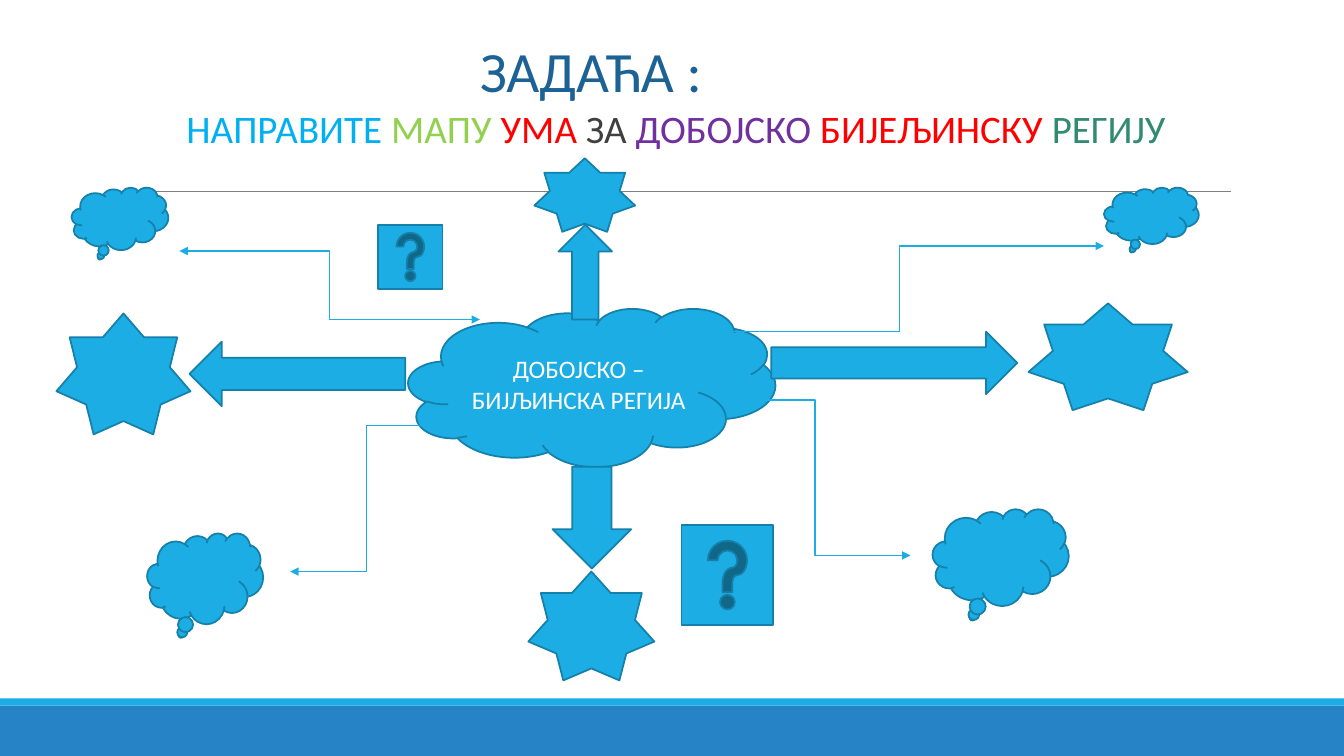
from lxml import etree
from pptx import Presentation
from pptx.dml.color import RGBColor
from pptx.enum.shapes import MSO_CONNECTOR, MSO_SHAPE
from pptx.enum.text import MSO_ANCHOR, PP_ALIGN
from pptx.oxml.ns import qn
from pptx.util import Inches, Pt

RECT, CLOUD = MSO_SHAPE.RECTANGLE, MSO_SHAPE.CLOUD
RIGHT, LEFT = MSO_SHAPE.RIGHT_ARROW, MSO_SHAPE.LEFT_ARROW
UP, DOWN = MSO_SHAPE.UP_ARROW, MSO_SHAPE.DOWN_ARROW
STAR, BUBBLE = MSO_SHAPE.STAR_7_POINT, MSO_SHAPE.CLOUD_CALLOUT
HELP = MSO_SHAPE.ACTION_BUTTON_HELP
STRAIGHT, ELBOW = MSO_CONNECTOR.STRAIGHT, MSO_CONNECTOR.ELBOW

WHITE = RGBColor(0xFF, 0xFF, 0xFF)
GRAY = RGBColor(0x80, 0x80, 0x80)
DARK = RGBColor(0x40, 0x40, 0x40)
BLUE = RGBColor(0x1C, 0xAD, 0xE4)
EDGE = RGBColor(0x15, 0x80, 0xA9)
BAND = RGBColor(0x26, 0x83, 0xC6)
NAVY = RGBColor(0x1D, 0x62, 0x94)
SKY = RGBColor(0x00, 0xB0, 0xF0)
LIME = RGBColor(0x92, 0xD0, 0x50)
RED = RGBColor(0xFF, 0x00, 0x00)
PURPLE = RGBColor(0x70, 0x30, 0xA0)
GREEN = RGBColor(0x32, 0x8B, 0x71)

prs = Presentation()
prs.slide_width, prs.slide_height = Inches(13.33), Inches(7.5)
slide = prs.slides.add_slide(prs.slide_layouts[6])


def add_form(kind, box, fill=BLUE, edge=EDGE):
    form = slide.shapes.add_shape(kind, *map(Inches, box))
    form.shadow.inherit = False
    form.fill.solid()
    form.fill.fore_color.rgb = fill
    if edge is None:
        form.line.fill.background()
    else:
        form.line.color.rgb = edge
        form.line.width = Pt(1.25)
    return form


def add_link(kind, ends, color, width, tips=()):
    link = slide.shapes.add_connector(kind, *map(Inches, ends))
    link.line.color.rgb = color
    link.line.width = Pt(width)
    for tip in tips:
        etree.SubElement(link.line._get_or_add_ln(), qn("a:" + tip), type="triangle")
    etree.SubElement(link._element.spPr, qn("a:effectLst"))


add_form(RECT, (0, 7, 13.33, 0.5), BAND, None)
add_form(RECT, (0, 6.93, 13.33, 0.07), BLUE, None)
add_link(STRAIGHT, (1.31, 1.9, 12.21, 1.9), GRAY, 0.5)

head = slide.shapes.add_textbox(0, Inches(0.01), Inches(13.33), Inches(1.57))
frame = head.text_frame
frame.word_wrap = True
frame.margin_left = frame.margin_right = 0
frame.margin_top = Inches(0.53)
lines = [
    (4.76, 40.7, 0, [("ЗАДАЋА :", NAVY)]),
    (1.85, 27.8, 11, [
        ("НАПРАВИТЕ ", SKY), ("МАПУ ", LIME), ("УМА ", RED), ("ЗА ", DARK),
        ("ДОБОЈСКО ", PURPLE), ("БИЈЕЉИНСКУ ", RED), ("РЕГИЈУ", GREEN)]),
]
for row, (indent, size, gap, words) in enumerate(lines):
    para = frame.add_paragraph() if row else frame.paragraphs[0]
    para._p.get_or_add_pPr().set("marL", str(Inches(indent)))
    para.line_spacing = 0.7
    para.space_before = Pt(gap)
    para.font.name = "Calibri"
    para.font.size = Pt(size)
    for word, color in words:
        run = para.add_run()
        run.text = word
        run.font.color.rgb = color

hub = add_form(CLOUD, (4.05, 3.06, 3.64, 1.57))
hub.text_frame.word_wrap = True
hub.text_frame.vertical_anchor = MSO_ANCHOR.MIDDLE
label = hub.text_frame.paragraphs[0]
label.text = "ДОБОЈСКО –БИЈЉИНСКА РЕГИЈА"
label.alignment = PP_ALIGN.CENTER
label.font.name = "Calibri"
label.font.size = Pt(18)
label.font.color.rgb = WHITE

both = ("headEnd", "tailEnd")
for ends, tips in [
    ((4.39, 4.22, 2.88, 5.67), both[1:]),
    ((7.14, 3.97, 9.03, 5.51), both),
    ((6.89, 3.29, 10.95, 2.44), both),
    ((4.76, 3.17, 1.78, 2.49), both),
]:
    add_link(ELBOW, ends, BLUE, 1, tips)

for kind, box in [
    (RIGHT, (7.65, 3.29, 2.44, 0.62)),
    (DOWN, (5.48, 4.63, 0.78, 1.01)),
    (LEFT, (1.88, 3.39, 2.14, 0.64)),
    (UP, (5.54, 2.23, 0.53, 0.94)),
    (STAR, (10.2, 3.01, 1.58, 1.06)),
    (STAR, (0.56, 3.11, 1.33, 1.2)),
    (STAR, (5.24, 5.67, 1.25, 1.08)),
    (STAR, (5.3, 1.57, 1, 0.73)),
    (BUBBLE, (10.95, 1.86, 0.94, 0.56)),
    (BUBBLE, (0.71, 1.86, 0.96, 0.62)),
    (BUBBLE, (1.46, 5.29, 1.15, 0.9)),
    (BUBBLE, (9.25, 5.05, 1.35, 0.96)),
    (HELP, (3.75, 2.23, 0.64, 0.64)),
    (HELP, (6.76, 5.21, 0.91, 0.99)),
]:
    add_form(kind, box)

prs.save("out.pptx")
